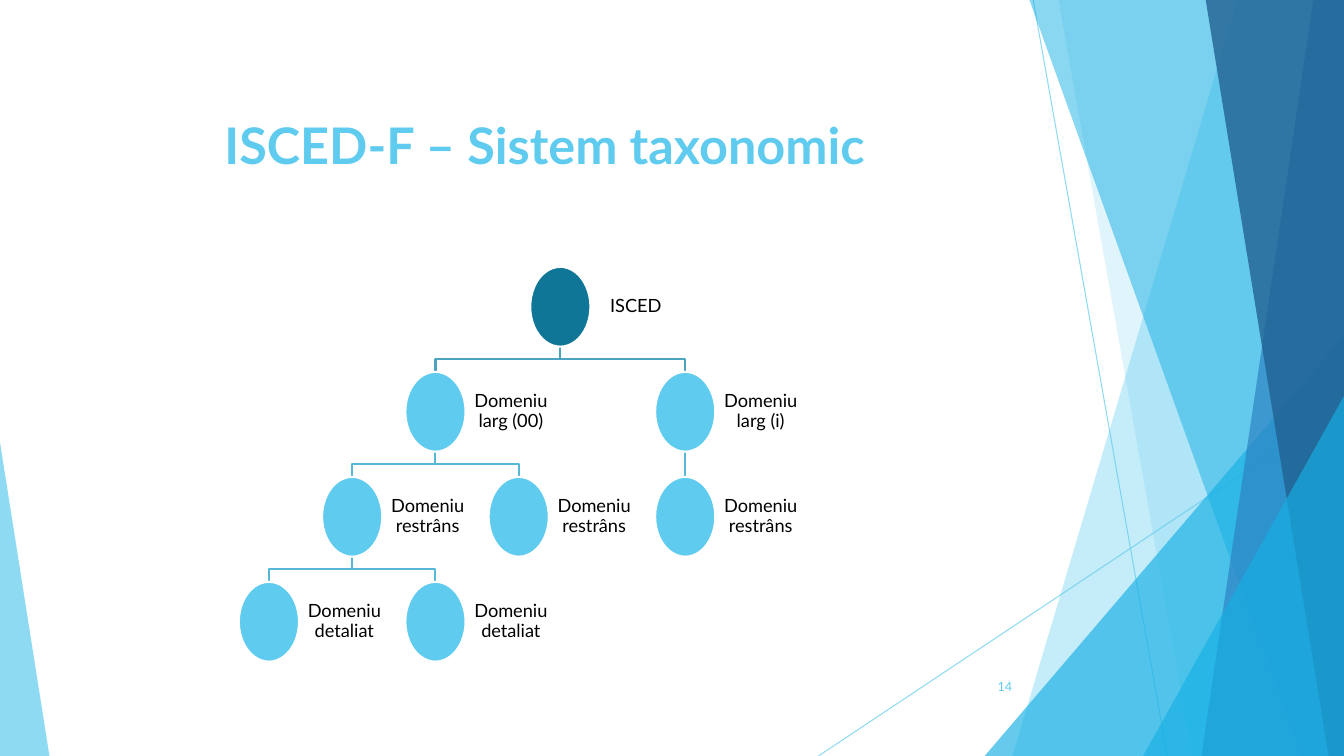
"""Build the ISCED-F taxonomy slide with its faceted backdrop."""
from lxml.etree import SubElement
from pptx import Presentation
from pptx.dml.color import RGBColor
from pptx.enum.shapes import MSO_CONNECTOR as CONNECTOR, MSO_SHAPE as SHAPE
from pptx.enum.text import MSO_ANCHOR as ANCHOR, PP_ALIGN as ALIGN
from pptx.oxml.ns import qn
from pptx.util import Pt

WIDTH, HEIGHT = 960, 540
FONT = "Lato"
COLORS = {
    "sky": "5FCBEF", "cyan": "17B0E4", "blue": "2E83C3", "navy": "226292",
    "root": "0F7698", "root_link": "4CA3BF", "link": "56B8D9",
    "black": "000000", "white": "FFFFFF",
}
FACET_TOP = -0.7
FACETS = [
    (884.2, 723.2, "sky", 36),
    (756, 851.8, "sky", 20),
    (735.1, 929.5, "cyan", 50),
    (938.2, 858.2, "blue", 70),
    (861.1, 949, "navy", 80),
]
CORNERS = [
    (703.4, 239.8, 256.6, 300.2, 1, "cyan", 66),
    (816.5, 283, 143.5, 257, 1, "cyan", 66),
    (0, 316, 35.3, 224, 0, "sky", 70),
]
RAYS = [(738, 0, 833.8, HEIGHT), (WIDTH, 290.2, 584.6, HEIGHT)]

NODE_WIDTH, NODE_HEIGHT, LABEL_WIDTH = 43, 57, 64.8
FIRST_CENTER, COLUMN_STEP = 192.1, 59.47
FIRST_TOP, LEVEL_STEP = 190.6, 75
TREE = ("ISCED", 3.5, [
    ("Domeniu larg (00)", 2, [
        ("Domeniu restrâns", 1, [
            ("Domeniu detaliat", 0, []),
            ("Domeniu detaliat", 2, []),
        ]),
        ("Domeniu restrâns", 3, []),
    ]),
    ("Domeniu larg (i)", 5, [("Domeniu restrâns", 5, [])]),
])


def rgb(name):
    return RGBColor.from_string(COLORS[name])


def set_opacity(shape, percent):
    for color in shape._element.spPr.iter(qn("a:srgbClr")):
        SubElement(color, qn("a:alpha")).set("val", str(percent * 1000))


def paint(shape, color, opacity=100):
    shape.shadow.inherit = False
    shape.fill.solid()
    shape.fill.fore_color.rgb = rgb(color)
    shape.line.fill.background()
    if opacity < 100:
        set_opacity(shape, opacity)


def stroke(shape, color, width):
    shape.line.color.rgb = rgb(color)
    shape.line.width = Pt(width)


def add_outline(slide, points, close):
    corners = [(Pt(x), Pt(y)) for x, y in points]
    builder = slide.shapes.build_freeform(*corners[0])
    builder.add_line_segments(corners[1:], close=close)
    return builder.convert_to_shape()


def add_line(slide, x1, y1, x2, y2, color, width):
    line = slide.shapes.add_connector(
        CONNECTOR.STRAIGHT, Pt(x1), Pt(y1), Pt(x2), Pt(y2))
    stroke(line, color, width)
    SubElement(line._element.spPr, qn("a:effectLst"))
    return line


def add_facet(slide, top_x, bottom_x, color, opacity):
    points = [(top_x, FACET_TOP), (WIDTH, FACET_TOP),
              (WIDTH, HEIGHT), (bottom_x, HEIGHT)]
    paint(add_outline(slide, points, True), color, opacity)


def add_corner(slide, left, top, width, height, apex, color, opacity):
    shape = slide.shapes.add_shape(
        SHAPE.ISOSCELES_TRIANGLE, Pt(left), Pt(top), Pt(width), Pt(height))
    shape.adjustments[0] = apex
    paint(shape, color, opacity)


def add_text(slide, text, left, top, width, height, size, color,
             align=ALIGN.CENTER, anchor=ANCHOR.MIDDLE, bold=False):
    frame = slide.shapes.add_textbox(
        Pt(left), Pt(top), Pt(width), Pt(height)).text_frame
    frame.word_wrap = True
    frame.vertical_anchor = anchor
    frame.text = text
    paragraph = frame.paragraphs[0]
    paragraph.alignment = align
    font = paragraph.runs[0].font
    font.name, font.size, font.bold = FONT, Pt(size), bold
    font.color.rgb = rgb(color)
    return frame


def add_backdrop(slide):
    for ray in RAYS:
        set_opacity(add_line(slide, *ray, "sky", 0.75), 70)
    for facet in FACETS[:2]:
        add_facet(slide, *facet)
    add_corner(slide, *CORNERS[0])
    for facet in FACETS[2:]:
        add_facet(slide, *facet)
    for corner in CORNERS[1:]:
        add_corner(slide, *corner)


def locate(column, level):
    return FIRST_CENTER + column * COLUMN_STEP, FIRST_TOP + level * LEVEL_STEP


def add_link(slide, parent, child, level):
    (x1, parent_top), (x2, y2) = locate(parent, level), locate(child, level + 1)
    y1 = parent_top + NODE_HEIGHT
    color = "link" if level else "root_link"
    if x1 == x2:
        add_line(slide, x1, y1, x2, y2, color, 1.5)
        return
    middle = (y1 + y2) / 2
    points = [(x1, y1), (x1, middle), (x2, middle), (x2, y2)]
    elbow = add_outline(slide, points, False)
    elbow.shadow.inherit = False
    elbow.fill.background()
    stroke(elbow, color, 1.5)


def add_node(slide, label, column, level):
    center, top = locate(column, level)
    left = center - NODE_WIDTH / 2
    node = slide.shapes.add_shape(
        SHAPE.OVAL, Pt(left), Pt(top), Pt(NODE_WIDTH), Pt(NODE_HEIGHT))
    paint(node, "sky" if level else "root")
    stroke(node, "white", 1.5)
    frame = add_text(slide, label, left + NODE_WIDTH, top,
                     LABEL_WIDTH, NODE_HEIGHT, 13, "black")
    frame.margin_left = frame.margin_right = Pt(3.6)
    frame.paragraphs[0].line_spacing = 0.9


def add_branch(slide, branch, level=0):
    label, column, children = branch
    for child in children:
        add_link(slide, column, child[1], level)
    add_node(slide, label, column, level)
    for child in children:
        add_branch(slide, child, level + 1)


def main():
    presentation = Presentation()
    presentation.slide_width, presentation.slide_height = Pt(WIDTH), Pt(HEIGHT)
    slide = presentation.slides.add_slide(presentation.slide_layouts[6])
    add_backdrop(slide)
    add_text(slide, "ISCED-F – Sistem taxonomic", 48.2, 77.8, 681.8, 74.9,
             36, "sky", anchor=ANCHOR.TOP, bold=True)
    add_text(slide, "14", 676, 476, 54, 28.8, 9, "sky", align=ALIGN.RIGHT)
    add_branch(slide, TREE)
    presentation.save("out.pptx")


if __name__ == "__main__":
    main()
